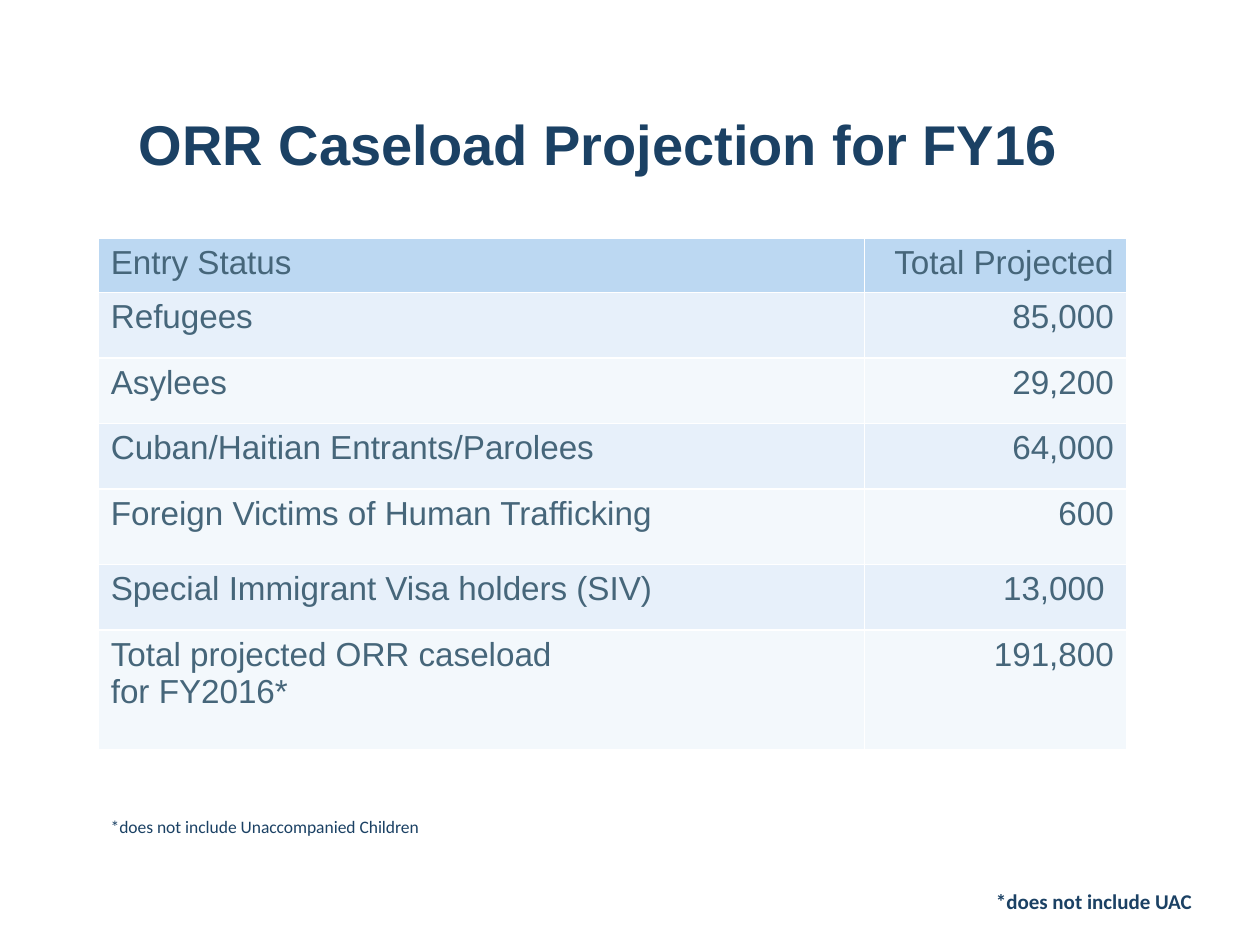
import pptx
import pptx.dml.color
import pptx.enum.text
import pptx.util

RGBColor = pptx.dml.color.RGBColor
Inches = pptx.util.Inches
ALIGN = pptx.enum.text.PP_ALIGN
ANCHOR = pptx.enum.text.MSO_ANCHOR

NAVY = RGBColor(0x1B, 0x41, 0x64)
SLATE = RGBColor(0x46, 0x66, 0x7A)
HEADER_BLUE = RGBColor(0xBC, 0xD8, 0xF2)
BANDS = (RGBColor(0xF3, 0xF8, 0xFC), RGBColor(0xE7, 0xF0, 0xFA))

MARGIN = 0.78
COLUMN_WIDTHS = (6.08, 2.08)
ROW_HEIGHTS = (0.43, 0.52, 0.52, 0.52, 0.6, 0.52, 0.95)
CASELOAD = (
    ("Entry Status", "Total Projected"),
    ("Refugees", "85,000"),
    ("Asylees", "29,200"),
    ("Cuban/Haitian Entrants/Parolees", "64,000"),
    ("Foreign Victims of Human Trafficking", "600"),
    ("Special Immigrant Visa holders (SIV)", "13,000 "),
    ("Total projected ORR caseload \vfor FY2016*", "191,800"),
)


def style(paragraph, size, font_name, color, align, bold=False):
    paragraph.alignment = align
    font = paragraph.font
    font.size = pptx.util.Pt(size)
    font.name = font_name
    font.color.rgb = color
    font.bold = bold


def set_title(slide, text):
    title = slide.shapes.title
    title.left, title.top = Inches(0.25), Inches(0.51)
    title.width, title.height = Inches(9), Inches(1.26)
    title.text_frame.text = text
    title.text_frame.vertical_anchor = ANCHOR.MIDDLE
    style(title.text_frame.paragraphs[0], 32, "Arial", NAVY, ALIGN.CENTER, True)


def add_caseload_table(slide):
    table = slide.shapes.add_table(
        len(CASELOAD), len(COLUMN_WIDTHS), Inches(MARGIN), Inches(1.89),
        Inches(sum(COLUMN_WIDTHS)), Inches(sum(ROW_HEIGHTS))).table
    for column, width in zip(table.columns, COLUMN_WIDTHS):
        column.width = Inches(width)
    for index, (row, height) in enumerate(zip(table.rows, ROW_HEIGHTS)):
        row.height = Inches(height)
        for cell, text, align in zip(row.cells, CASELOAD[index],
                                     (ALIGN.LEFT, ALIGN.RIGHT)):
            cell.text = text
            cell.fill.solid()
            cell.fill.fore_color.rgb = BANDS[index % 2] if index else HEADER_BLUE
            style(cell.text_frame.paragraphs[0], 19, "Arial", SLATE, align)


def add_footnote(slide, text, box, size, align, bold=False):
    frame = slide.shapes.add_textbox(*map(Inches, box)).text_frame
    frame.word_wrap = True
    frame.auto_size = pptx.enum.text.MSO_AUTO_SIZE.SHAPE_TO_FIT_TEXT
    frame.text = text
    style(frame.paragraphs[0], size, "Calibri", NAVY, align, bold)


def main():
    deck = pptx.Presentation()
    deck.slide_width, deck.slide_height = Inches(10), Inches(7.5)
    slide = deck.slides.add_slide(deck.slide_layouts.get_by_name("Title Only"))
    set_title(slide, "ORR Caseload Projection for FY16")
    add_caseload_table(slide)
    add_footnote(slide, "*does not include UAC", (5.98, 7, 3.58, 0.3),
                 12, ALIGN.RIGHT, True)
    add_footnote(slide, "*does not include Unaccompanied Children",
                 (MARGIN, 6.43, 6.06, 0.27), 10, ALIGN.LEFT)
    deck.save("out.pptx")


if __name__ == "__main__":
    main()
